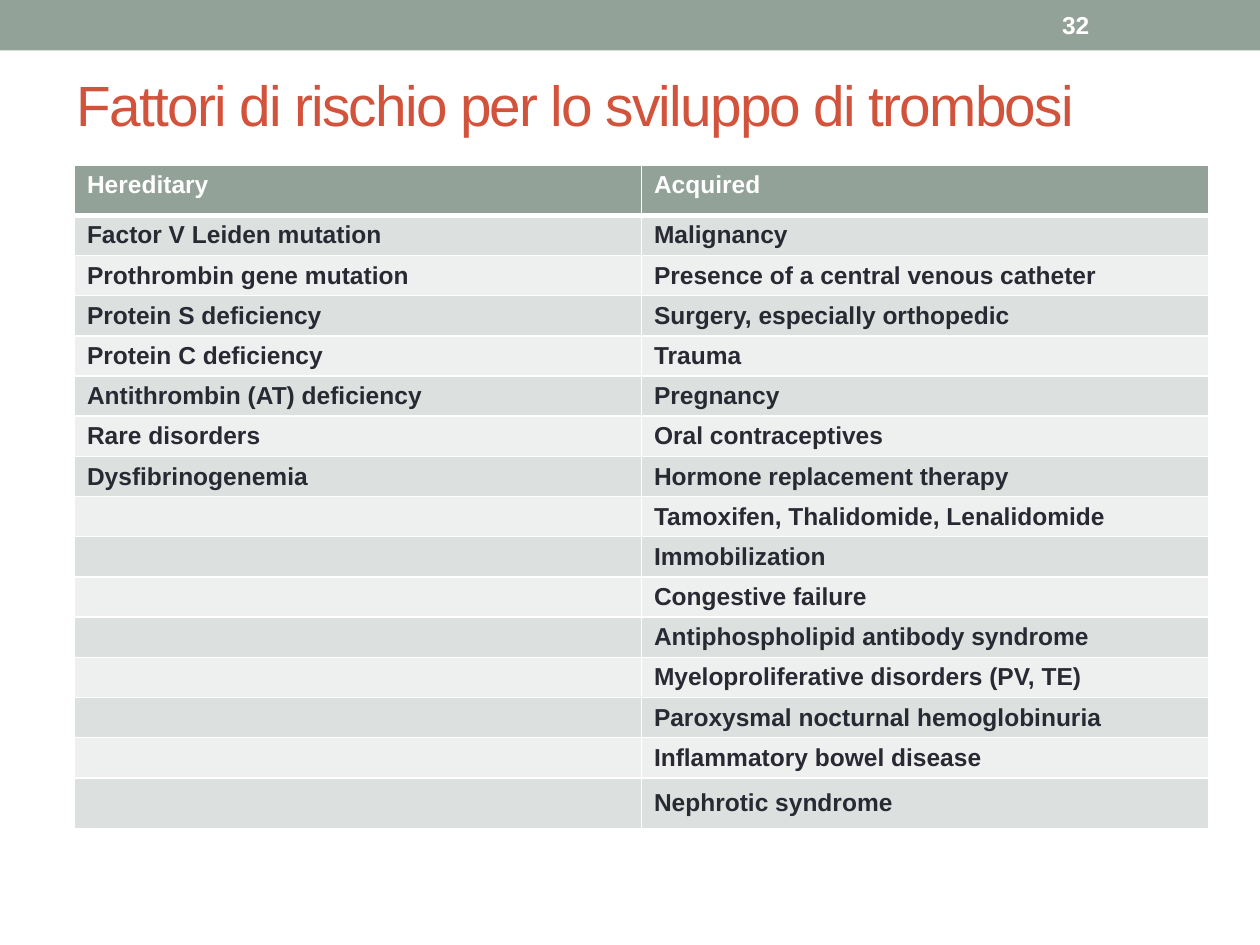
from itertools import zip_longest

from lxml.etree import SubElement
from pptx import Presentation
from pptx.dml.color import RGBColor
from pptx.enum.shapes import MSO_SHAPE as Shape
from pptx.enum.text import MSO_ANCHOR as Anchor
from pptx.oxml.ns import qn
from pptx.util import Cm, Pt

TITLE = "Fattori di rischio per lo sviluppo di trombosi"
PAGE_NUMBER = "32"
HEADERS = ("Hereditary", "Acquired")
HEREDITARY = [
    "Factor V Leiden mutation",
    "Prothrombin gene mutation",
    "Protein S deficiency",
    "Protein C deficiency",
    "Antithrombin (AT) deficiency",
    "Rare disorders",
    "Dysfibrinogenemia",
]
ACQUIRED = [
    "Malignancy",
    "Presence of a central venous catheter",
    "Surgery, especially orthopedic",
    "Trauma",
    "Pregnancy",
    "Oral contraceptives",
    "Hormone replacement therapy",
    "Tamoxifen, Thalidomide, Lenalidomide",
    "Immobilization",
    "Congestive failure",
    "Antiphospholipid antibody syndrome",
    "Myeloproliferative disorders (PV, TE)",
    "Paroxysmal nocturnal hemoglobinuria",
    "Inflammatory bowel disease",
    "Nephrotic syndrome",
]
COLORS = {
    "sage": "93A299",
    "title": "D2533C",
    "ink": "292934",
    "white": "FFFFFF",
    "dark band": "DCE0DE",
    "light band": "EEF0EF",
}
PAGE_WIDTH, PAGE_HEIGHT = 25.4, 19.05
COLUMN_WIDTH = 11.43
HEADER_HEIGHT, ROW_HEIGHT, LAST_HEIGHT = 1.01, 0.81, 1.02


def color(name):
    return RGBColor.from_string(COLORS[name])


def write(frame, text, size, color_name, bold=False):
    frame.text = text
    for span in frame.paragraphs[0].runs:
        span.font.name = "Arial"
        span.font.size = Pt(size)
        span.font.bold = bold
        span.font.color.rgb = color(color_name)


def add_text(page, place, *style):
    box = page.shapes.add_textbox(*map(Cm, place))
    box.text_frame.word_wrap = True
    box.text_frame.vertical_anchor = Anchor.MIDDLE
    write(box.text_frame, *style)
    return box


def set_borders(cell, top, bottom):
    """Draw white borders; the widths of top and bottom are in points."""
    properties = cell._tc.get_or_add_tcPr()
    sides = {"a:lnL": 1, "a:lnR": 1, "a:lnT": top, "a:lnB": bottom}
    for side, width in sides.items():
        line = SubElement(properties, qn(side), w=str(Pt(width)))
        fill = SubElement(line, qn("a:solidFill"))
        SubElement(fill, qn("a:srgbClr"), val=COLORS["white"])


def add_risk_table(page):
    rows = [HEADERS, *zip_longest(HEREDITARY, ACQUIRED, fillvalue="")]
    heights = [HEADER_HEIGHT] + [ROW_HEIGHT] * (len(rows) - 2) + [LAST_HEIGHT]
    table = page.shapes.add_table(
        len(rows), len(HEADERS), Cm(1.5), Cm(3.33),
        Cm(COLUMN_WIDTH * len(HEADERS)), Cm(sum(heights))).table
    for column in table.columns:
        column.width = Cm(COLUMN_WIDTH)
    for index, (texts, height) in enumerate(zip(rows, heights)):
        table.rows[index].height = Cm(height)
        is_header = index == 0
        band = "dark band" if index % 2 else "light band"
        for cell, text in zip(table.rows[index].cells, texts):
            set_borders(cell, top=3 if index == 1 else 1,
                        bottom=3 if is_header else 1)
            cell.fill.solid()
            cell.fill.fore_color.rgb = color("sage" if is_header else band)
            if not is_header:
                cell.vertical_anchor = Anchor.MIDDLE
                cell.margin_top = cell.margin_bottom = 0
            write(cell.text_frame, text, 14,
                  "white" if is_header else "ink", True)


def main():
    deck = Presentation()
    deck.slide_width, deck.slide_height = Cm(PAGE_WIDTH), Cm(PAGE_HEIGHT)
    page = deck.slides.add_slide(deck.slide_layouts[6])

    banner = page.shapes.add_shape(
        Shape.RECTANGLE, 0, 0, Cm(PAGE_WIDTH), Cm(1.02))
    banner.shadow.inherit = False
    banner.fill.solid()
    banner.fill.fore_color.rgb = color("sage")
    banner.line.fill.background()

    title = add_text(page, (1.3, 1.12, 22.86, 1.96), TITLE, 32.4, "title")
    span = title.text_frame.paragraphs[0].runs[0]
    span.font._element.set("spc", "-100")

    add_risk_table(page)
    add_text(page, (21.16, 0.05, 2.97, 0.91), PAGE_NUMBER, 14, "white", True)
    deck.save("out.pptx")


if __name__ == "__main__":
    main()
